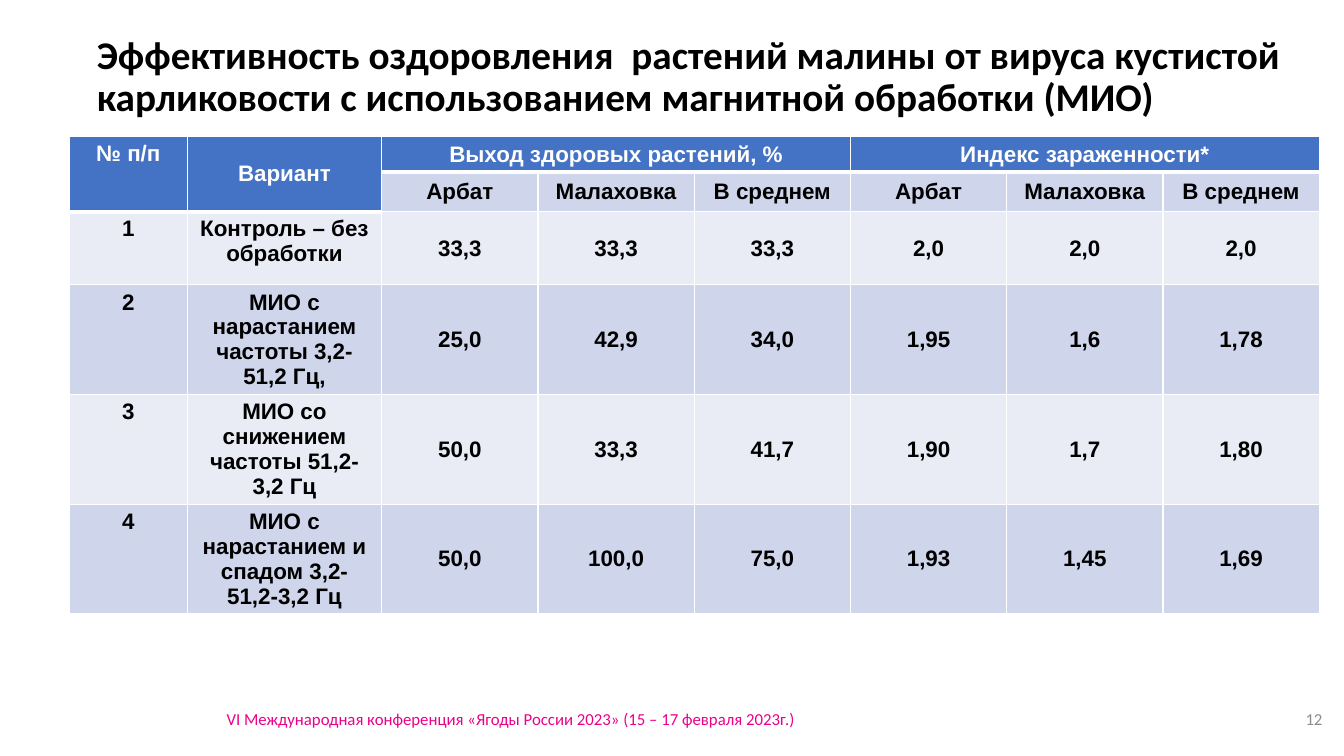
from dataclasses import dataclass

from lxml import etree
from pptx import Presentation
from pptx.dml.color import RGBColor
from pptx.enum.text import MSO_ANCHOR, MSO_AUTO_SIZE, PP_ALIGN
from pptx.oxml.ns import qn
from pptx.slide import Slide
from pptx.table import Table, _Cell
from pptx.text.text import TextFrame
from pptx.util import Pt

LEFT, CENTER, RIGHT = PP_ALIGN.LEFT, PP_ALIGN.CENTER, PP_ALIGN.RIGHT
TOP, MIDDLE = MSO_ANCHOR.TOP, MSO_ANCHOR.MIDDLE
NO_AUTOFIT = MSO_AUTO_SIZE.NONE
TITLE_ONLY = 5


@dataclass(frozen=True)
class TextStyle:
    font: str
    size: float
    color: str
    bold: bool = False


@dataclass(frozen=True)
class Theme:
    title: TextStyle = TextStyle("Calibri", 28, "000000", True)
    header: TextStyle = TextStyle("Arial", 16, "FFFFFF", True)
    body: TextStyle = TextStyle("Arial", 16, "000000", True)
    footer: TextStyle = TextStyle("Calibri", 12, "EB008A")
    number: TextStyle = TextStyle("Calibri", 12, "8C8C8C")
    header_fill: str = "4472C4"
    dark_band: str = "CFD5EA"
    light_band: str = "E9EBF5"
    border: str = "FFFFFF"
    thin: float = 1
    thick: float = 3


@dataclass(frozen=True)
class Area:
    left: float
    top: float
    width: float
    height: float


@dataclass(frozen=True)
class Label:
    text: str
    area: Area
    style: TextStyle
    align: PP_ALIGN
    anchor: MSO_ANCHOR


@dataclass(frozen=True)
class Header:
    text: str
    column: int
    row_span: int
    column_span: int
    anchor: MSO_ANCHOR = MIDDLE


@dataclass(frozen=True)
class Treatment:
    name: str
    values: tuple[str, ...]


THEME = Theme()
TITLE = Label(
    "Эффективность оздоровления  растений малины от вируса кустистой "
    "карликовости с использованием магнитной обработки (МИО)",
    Area(62, 28.8, 890, 53.3), THEME.title, LEFT, MIDDLE)
LABELS = (
    Label("VI Международная конференция «Ягоды России 2023» (15 – 17 февраля 2023г.)",
          Area(154.8, 502.5, 480, 21.8), THEME.footer, LEFT, TOP),
    Label("12", Area(894.2, 499, 57.6, 28.8), THEME.number, RIGHT, MIDDLE),
)
HEADERS = (
    Header("№ п/п", 0, 2, 1, TOP),
    Header("Вариант", 1, 2, 1),
    Header("Выход здоровых растений, %", 2, 1, 3),
    Header("Индекс зараженности*", 5, 1, 3),
)
SUBHEADERS = ("Арбат", "Малаховка", "В среднем") * 2
TREATMENTS = (
    Treatment("Контроль – без обработки", ("33,3", "33,3", "33,3", "2,0", "2,0", "2,0")),
    Treatment("МИО с нарастанием частоты 3,2-51,2 Гц,",
              ("25,0", "42,9", "34,0", "1,95", "1,6", "1,78")),
    Treatment("МИО со снижением частоты 51,2-3,2 Гц",
              ("50,0", "33,3", "41,7", "1,90", "1,7", "1,80")),
    Treatment("МИО с нарастанием и спадом 3,2-51,2-3,2 Гц",
              ("50,0", "100,0", "75,0", "1,93", "1,45", "1,69")),
)
COLUMN_WIDTHS = (84, 139) + (111.6,) * 6
ROW_HEIGHTS = (25, 28.5, 52.3) + (78.2,) * 3
TABLE_AREA = Area(49.7, 97.7, sum(COLUMN_WIDTHS), sum(ROW_HEIGHTS))
LEAD_COLUMNS = 2
HEADER_ROWS = 2


def write(frame: TextFrame, text: str, style: TextStyle, align: PP_ALIGN) -> None:
    para = frame.paragraphs[0]
    para.alignment = align
    span = para.add_run()
    span.text = text
    span.font.name = style.font
    span.font.size = Pt(style.size)
    span.font.bold = style.bold
    span.font.color.rgb = RGBColor.from_string(style.color)


def fill_label(box, label: Label) -> None:
    area = label.area
    box.left, box.top = Pt(area.left), Pt(area.top)
    box.width, box.height = Pt(area.width), Pt(area.height)
    frame = box.text_frame
    frame.word_wrap = True
    frame.auto_size = NO_AUTOFIT
    frame.vertical_anchor = label.anchor
    write(frame, label.text, label.style, label.align)


def add_label(page: Slide, label: Label) -> None:
    fill_label(page.shapes.add_textbox(0, 0, 0, 0), label)


def rule_below(row: int, column: int) -> float:
    header_end = HEADER_ROWS - 1 if column < LEAD_COLUMNS else 0
    return THEME.thick if row == header_end else THEME.thin


def add_borders(cell: _Cell, row: int, column: int) -> None:
    properties = cell._tc.get_or_add_tcPr()
    widths = {"a:lnL": THEME.thin, "a:lnR": THEME.thin,
              "a:lnT": rule_below(row - 1, column), "a:lnB": rule_below(row, column)}
    for tag, width in widths.items():
        line = etree.SubElement(properties, qn(tag), w=str(int(Pt(width))))
        fill = etree.SubElement(line, qn("a:solidFill"))
        etree.SubElement(fill, qn("a:srgbClr"), val=THEME.border)


def cell_fill(row: int, column: int) -> str:
    if row == 0 or (row < HEADER_ROWS and column < LEAD_COLUMNS):
        return THEME.header_fill
    return THEME.dark_band if row % 2 else THEME.light_band


def format_grid(grid: Table) -> None:
    for column, width in enumerate(COLUMN_WIDTHS):
        grid.columns[column].width = Pt(width)
    for row, height in enumerate(ROW_HEIGHTS):
        grid.rows[row].height = Pt(height)
        for column in range(len(COLUMN_WIDTHS)):
            cell = grid.cell(row, column)
            add_borders(cell, row, column)
            cell.fill.solid()
            cell.fill.fore_color.rgb = RGBColor.from_string(cell_fill(row, column))


def write_cell(cell: _Cell, text: str, style: TextStyle, anchor: MSO_ANCHOR) -> None:
    cell.vertical_anchor = anchor
    write(cell.text_frame, text, style, CENTER)


def add_results(page: Slide) -> None:
    area = TABLE_AREA
    grid = page.shapes.add_table(
        len(ROW_HEIGHTS), len(COLUMN_WIDTHS),
        Pt(area.left), Pt(area.top), Pt(area.width), Pt(area.height)).table
    format_grid(grid)
    for header in HEADERS:
        cell = grid.cell(0, header.column)
        cell.merge(grid.cell(header.row_span - 1, header.column + header.column_span - 1))
        write_cell(cell, header.text, THEME.header, header.anchor)
    for column, text in enumerate(SUBHEADERS, LEAD_COLUMNS):
        write_cell(grid.cell(1, column), text, THEME.body, MIDDLE)
    for number, treatment in enumerate(TREATMENTS, 1):
        texts = (str(number), treatment.name, *treatment.values)
        for column, text in enumerate(texts):
            anchor = TOP if column < LEAD_COLUMNS else MIDDLE
            write_cell(grid.cell(number + HEADER_ROWS - 1, column), text, THEME.body, anchor)


def main() -> None:
    deck = Presentation()
    deck.slide_width, deck.slide_height = Pt(960), Pt(540)
    page = deck.slides.add_slide(deck.slide_layouts[TITLE_ONLY])
    title = page.shapes.title
    fill_label(title, TITLE)
    title.text_frame.paragraphs[0].line_spacing = 0.9
    add_results(page)
    for label in LABELS:
        add_label(page, label)
    deck.save("out.pptx")


if __name__ == "__main__":
    main()
